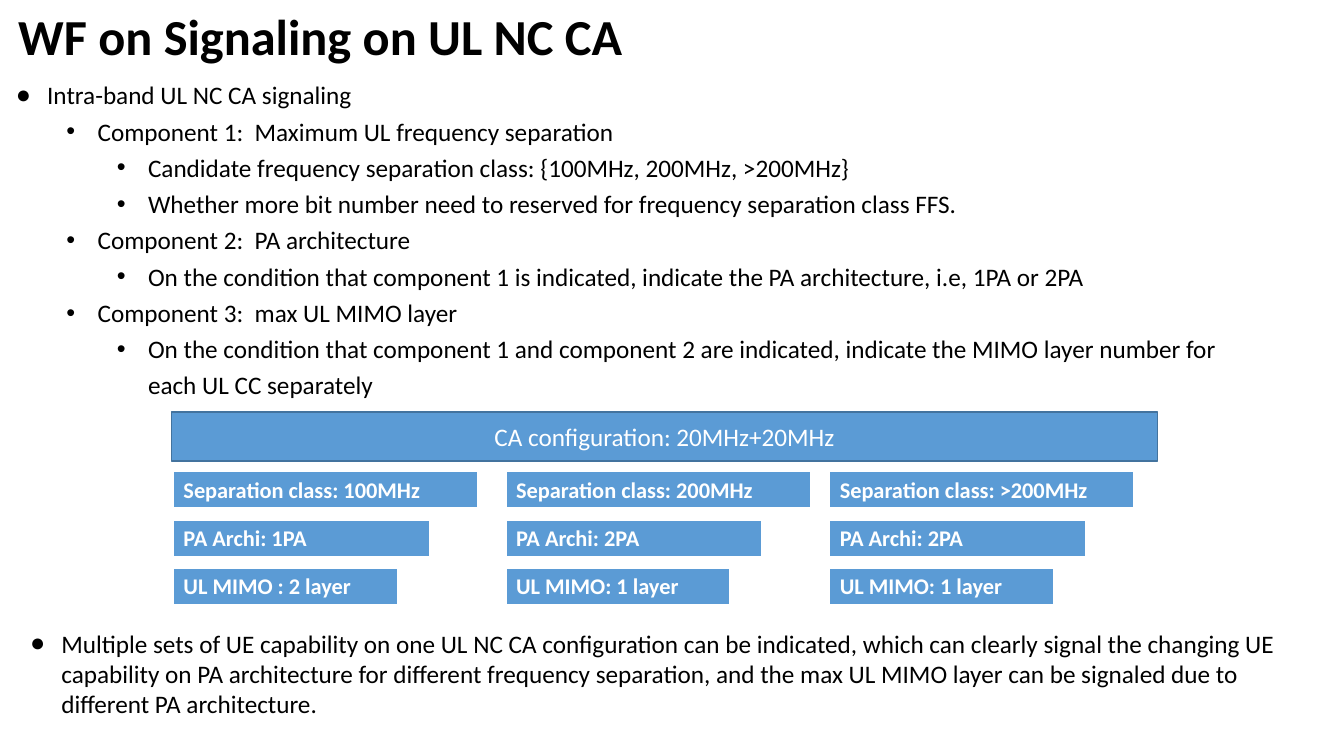
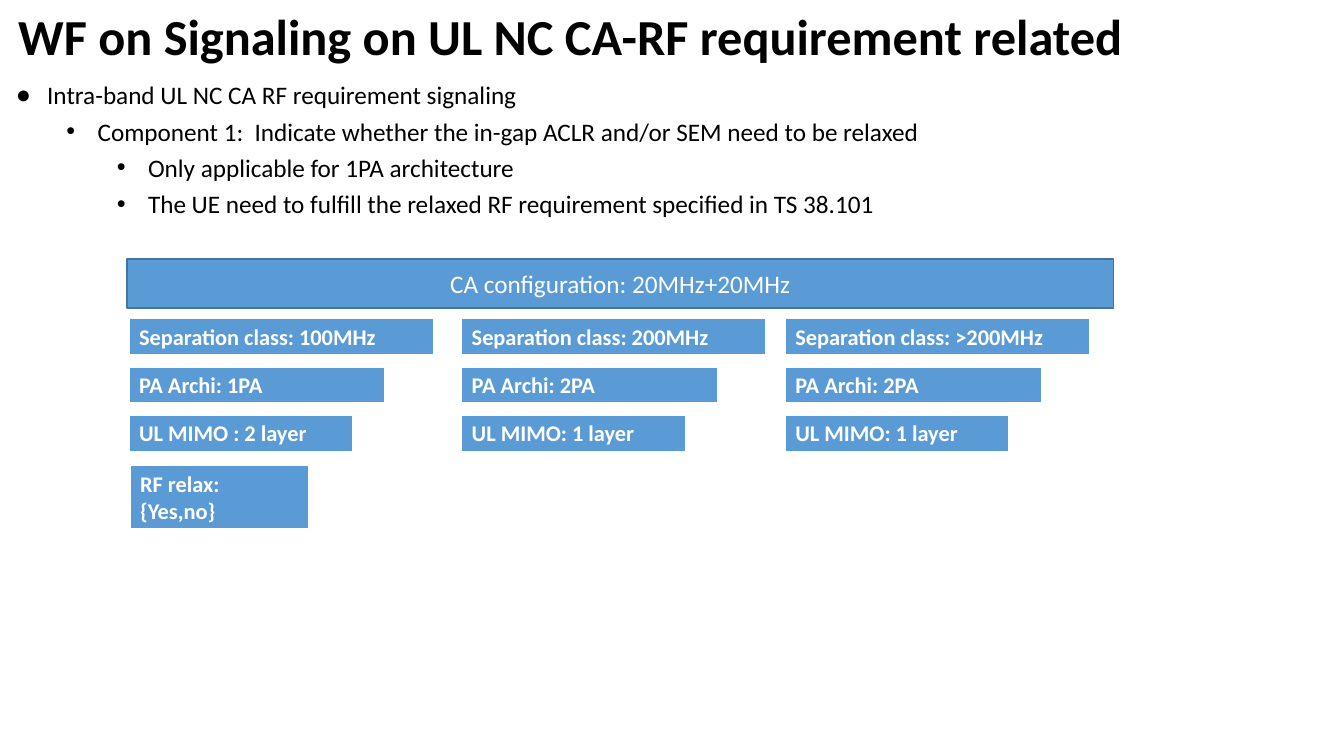
from lxml import etree
from pptx import Presentation
from pptx.dml.color import RGBColor
from pptx.enum.shapes import MSO_SHAPE
from pptx.enum.text import MSO_ANCHOR, MSO_AUTO_SIZE, PP_ALIGN
from pptx.oxml.ns import qn
from pptx.util import Inches, Pt

HUES = {"ink": "000000", "paper": "FFFFFF", "fill": "5B9BD5", "edge": "43739E"}
FONT = "Calibri"
MARKS = ("●", "•", "•")
HANG = 0.31

# Places and sizes are in hundredths of the slide's width and height.
TITLE = (0.6, 0.5, 97, 9.5)
BODY_X, BODY_Y, BODY_W = 0.45, 9.07, 93.5
NOTE = (1.5, 82.4, 96.8, 13.5)
BAR_W, BAR_H = 73.4, 6.5
COLS = (0.15, 24.9, 48.98)
WIDTHS = (22.65, 19.05, 16.65)
DROP, STEP, CELL_H = 7.9, 6.4, 4.93

BAR = "CA configuration: 20MHz+20MHz"
SETS = (
    ("Separation class: 100MHz", "PA Archi: 1PA", "UL MIMO : 2 layer"),
    ("Separation class: 200MHz", "PA Archi: 2PA", "UL MIMO: 1 layer"),
    ("Separation class: >200MHz", "PA Archi: 2PA", "UL MIMO: 1 layer"),
)

PAGES = [
    {
        "title": "WF on Signaling on UL NC CA",
        "points": [
            (0, "Intra-band UL NC CA signaling"),
            (1, "Component 1:  Maximum UL frequency separation"),
            (2, "Candidate frequency separation class: {100MHz, 200MHz, >200MHz}"),
            (2, "Whether more bit number need to reserved for frequency separation class FFS."),
            (1, "Component 2:  PA architecture"),
            (2, "On the condition that component 1 is indicated, indicate the PA "
                "architecture, i.e, 1PA or 2PA"),
            (1, "Component 3:  max UL MIMO layer"),
            (2, "On the condition that component 1 and component 2 are indicated, "
                "indicate the MIMO layer number for each UL CC separately"),
        ],
        "height": 45,
        "bar": (12.75, 54.5),
        "extra": [],
        "note": [
            (0, "Multiple sets of UE capability on one UL NC CA configuration can be "
                "indicated, which can clearly signal the changing UE capability on PA "
                "architecture for different frequency separation, and the max UL MIMO "
                "layer can be signaled due to different PA architecture."),
        ],
    },
    {
        "title": "WF on Signaling on UL NC CA-RF requirement related",
        "points": [
            (0, "Intra-band UL NC CA RF requirement signaling"),
            (1, "Component 1:  Indicate whether the in-gap ACLR and/or SEM need to be relaxed"),
            (2, "Only applicable for 1PA architecture"),
            (2, "The UE need to fulfill the relaxed RF requirement specified in TS 38.101"),
        ],
        "height": 20.8,
        "bar": (9.45, 34.25),
        "extra": [("RF relax: {Yes,no}", 9.68, 61.6, 13.28)],
        "note": [],
    },
]

deck = Presentation()
deck.slide_width, deck.slide_height = Inches(13.33), Inches(7.5)


def area(x, y, w, h):
    """Turn hundredths of the slide into left, top, width and height."""
    wide, high = deck.slide_width / 100, deck.slide_height / 100
    return int(x * wide), int(y * high), int(w * wide), int(h * high)


def style(par, size, hue, bold=False):
    for run in par.runs:
        run.font.name = FONT
        run.font.size = Pt(size)
        run.font.bold = bold
        run.font.color.rgb = RGBColor.from_string(HUES[hue])


for page in PAGES:
    slide = deck.slides.add_slide(deck.slide_layouts[5])

    title = slide.shapes.title
    title.left, title.top, title.width, title.height = area(*TITLE)
    frame = title.text_frame
    frame.text = page["title"]
    frame.auto_size = MSO_AUTO_SIZE.NONE
    frame.vertical_anchor = MSO_ANCHOR.MIDDLE
    head = frame.paragraphs[0]
    head.alignment = PP_ALIGN.LEFT
    head.line_spacing = 0.9
    style(head, 36, "ink", True)

    # Bulleted text
    body = (BODY_X, BODY_Y, BODY_W, page["height"])
    for spot, pitch, points in ((body, 1.2, page["points"]), (NOTE, 1.0, page["note"])):
        if not points:
            continue
        frame = slide.shapes.add_textbox(*area(*spot)).text_frame
        frame.word_wrap = True
        for i, (level, text) in enumerate(points):
            par = frame.add_paragraph() if i else frame.paragraphs[0]
            par.text = text
            par.level = level
            par.line_spacing = pitch
            props = par._p.get_or_add_pPr()
            props.set("marL", str(Inches(HANG + level / 2)))
            props.set("indent", str(-Inches(HANG)))
            etree.SubElement(props, qn("a:buFont"), typeface="Arial")
            etree.SubElement(props, qn("a:buChar"), char=MARKS[level])
            style(par, 18, "ink")

    # Configuration bar
    left, top = page["bar"]
    bar = slide.shapes.add_shape(MSO_SHAPE.RECTANGLE, *area(left, top, BAR_W, BAR_H))
    bar.shadow.inherit = False
    bar.fill.solid()
    bar.fill.fore_color.rgb = RGBColor.from_string(HUES["fill"])
    bar.line.color.rgb = RGBColor.from_string(HUES["edge"])
    bar.line.width = Pt(1)
    bar.text_frame.text = BAR
    bar.text_frame.vertical_anchor = MSO_ANCHOR.MIDDLE
    bar.text_frame.paragraphs[0].alignment = PP_ALIGN.CENTER
    style(bar.text_frame.paragraphs[0], 18, "paper")

    # One-cell tables: a column for each capability set
    tags = [
        (text, left + col, top + DROP + row * STEP, wide)
        for col, texts in zip(COLS, SETS)
        for row, (text, wide) in enumerate(zip(texts, WIDTHS))
    ]
    for text, x, y, wide in tags + page["extra"]:
        table = slide.shapes.add_table(1, 1, *area(x, y, wide, CELL_H)).table
        table.first_row = table.horz_banding = False
        cell = table.cell(0, 0)
        cell.text_frame.text = text
        style(cell.text_frame.paragraphs[0], 16, "paper", True)
        props = cell._tc.get_or_add_tcPr()
        for side, width in (("L", 1), ("R", 1), ("T", 1), ("B", 3)):
            line = etree.SubElement(props, qn("a:ln" + side), w=str(Pt(width)))
            solid = etree.SubElement(line, qn("a:solidFill"))
            etree.SubElement(solid, qn("a:srgbClr"), val=HUES["paper"])
        cell.fill.solid()
        cell.fill.fore_color.rgb = RGBColor.from_string(HUES["fill"])

deck.save("out.pptx")
